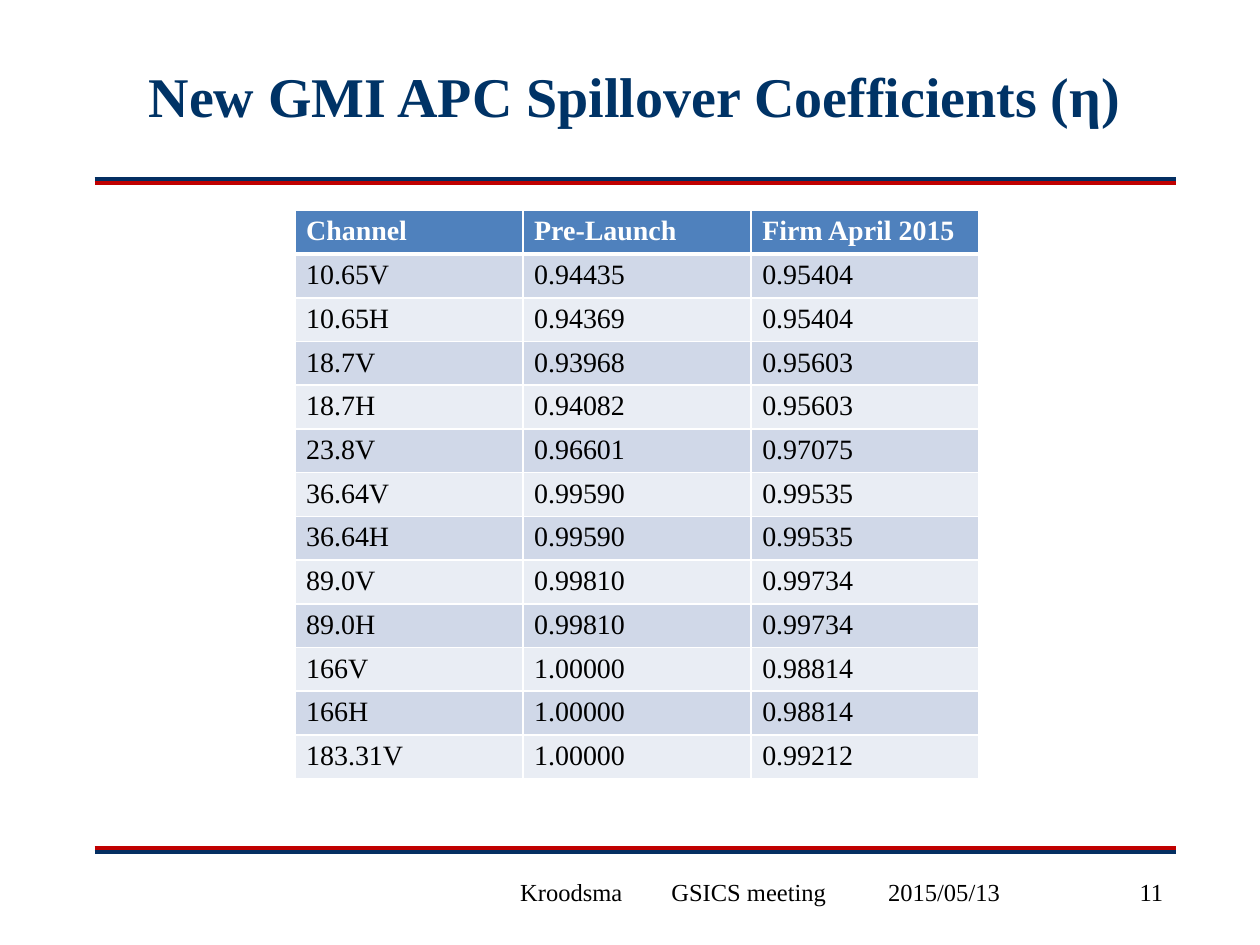
from dataclasses import dataclass
from lxml import etree
from pptx import Presentation, util as u
from pptx.dml.color import RGBColor
from pptx.enum import shapes, text
from pptx.oxml import ns

WIDE, HIGH = 10, 7.5
LEFT, RIGHT = 0.75, 9.33


@dataclass(frozen=True)
class Theme:
    face: str = "Times New Roman"
    title: str = "003366"
    navy: str = "042F62"
    red: str = "C00000"
    ink: str = "000000"
    white: str = "FFFFFF"
    head: str = "4F81BD"
    bands: tuple = ("D0D8E8", "E9EDF4")
    big: int = 32
    mid: int = 16
    small: int = 14


LOOK = Theme()

HEADS = ["Channel", "Pre-Launch", "Firm April 2015"]
ROWS = [
    ("10.65V", "0.94435", "0.95404"),
    ("10.65H", "0.94369", "0.95404"),
    ("18.7V", "0.93968", "0.95603"),
    ("18.7H", "0.94082", "0.95603"),
    ("23.8V", "0.96601", "0.97075"),
    ("36.64V", "0.99590", "0.99535"),
    ("36.64H", "0.99590", "0.99535"),
    ("89.0V", "0.99810", "0.99734"),
    ("89.0H", "0.99810", "0.99734"),
    ("166V", "1.00000", "0.98814"),
    ("166H", "1.00000", "0.98814"),
    ("183.31V", "1.00000", "0.99212"),
]


def put(obj, **vals):
    for key, val in vals.items():
        setattr(obj, key, val)


def box(left, top, wide, high):
    return dict(left=u.Inches(left), top=u.Inches(top),
                width=u.Inches(wide), height=u.Inches(high))


def style(para, size, hue, bold=False):
    put(para.font, name=LOOK.face, size=u.Pt(size), bold=bold)
    para.font.color.rgb = RGBColor.from_string(hue)


def child(node, tag, **vals):
    return etree.SubElement(node, ns.qn(tag), **vals)


def title(slide, words):
    shape = slide.shapes.title
    put(shape, **box(LEFT, 0.17, RIGHT - LEFT, 1.17))
    frame = shape.text_frame
    put(frame, text=words, word_wrap=True,
        vertical_anchor=text.MSO_ANCHOR.MIDDLE)
    para = frame.paragraphs[0]
    para.alignment = text.PP_ALIGN.CENTER
    style(para, LOOK.big, LOOK.title, True)


def rule(slide, y, hue):
    line = slide.shapes.add_connector(
        shapes.MSO_CONNECTOR.STRAIGHT, u.Inches(LEFT), u.Inches(y),
        u.Inches(RIGHT), u.Inches(y))
    line.line.color.rgb = RGBColor.from_string(hue)
    line.line.width = u.Pt(2.5)
    child(line._element.spPr, "a:effectLst")


def note(slide, words, left, wide, align, tabs=()):
    shape = slide.shapes.add_textbox(**box(left, 6.83, wide, 0.5))
    frame = shape.text_frame
    put(frame, text=words, word_wrap=True,
        vertical_anchor=text.MSO_ANCHOR.MIDDLE)
    para = frame.paragraphs[0]
    para.alignment = align
    if tabs:
        stops = child(para._p.get_or_add_pPr(), "a:tabLst")
        for stop in tabs:
            child(stops, "a:tab", pos=str(u.Inches(stop)), algn="l")
    style(para, LOOK.small, LOOK.ink)


def edge(cell, side, width):
    line = child(cell._tc.get_or_add_tcPr(), "a:ln" + side,
                 w=str(u.Pt(width)))
    child(child(line, "a:solidFill"), "a:srgbClr", val=LOOK.white)


def fill(cell, words, row):
    # The header keeps a thick lower edge, shared with the first data row
    thick = {"T": 3 if row == 1 else 1, "B": 3 if row == 0 else 1}
    for side in "LRTB":
        edge(cell, side, thick.get(side, 1))
    top = row == 0
    cell.fill.solid()
    cell.fill.fore_color.rgb = RGBColor.from_string(
        LOOK.head if top else LOOK.bands[(row - 1) % 2])
    put(cell, text=words, margin_left=u.Inches(0.09),
        margin_right=u.Inches(0.09), margin_top=u.Pt(3.2),
        margin_bottom=u.Pt(3.2))
    style(cell.text_frame.paragraphs[0], LOOK.mid,
          LOOK.white if top else LOOK.ink, top)


def table(slide, rows):
    grid = slide.shapes.add_table(
        len(rows), len(HEADS), **box(2.34, 1.67, 5.43, 4.51)).table
    for r, row in enumerate(rows):
        for c, words in enumerate(row):
            fill(grid.cell(r, c), words, r)


def main():
    deck = Presentation()
    put(deck, slide_width=u.Inches(WIDE), slide_height=u.Inches(HIGH))
    slide = deck.slides.add_slide(deck.slide_layouts[5])

    # Paired rules above and below the content, red on the inside
    for navy, red in ((1.42, 1.45), (6.76, 6.73)):
        rule(slide, navy, LOOK.navy)
        rule(slide, red, LOOK.red)

    title(slide, "New GMI APC Spillover Coefficients (η)")
    table(slide, [HEADS] + ROWS)

    # Footer: author, meeting and date on tab stops, then page number
    note(slide, "Kroodsma\tGSICS meeting\t2015/05/13", 4.03, 4.05,
         text.PP_ALIGN.LEFT, (1.2, 2.92))
    note(slide, "11", 8.08, RIGHT - 8.08, text.PP_ALIGN.RIGHT)
    deck.save("out.pptx")


if __name__ == "__main__":
    main()
